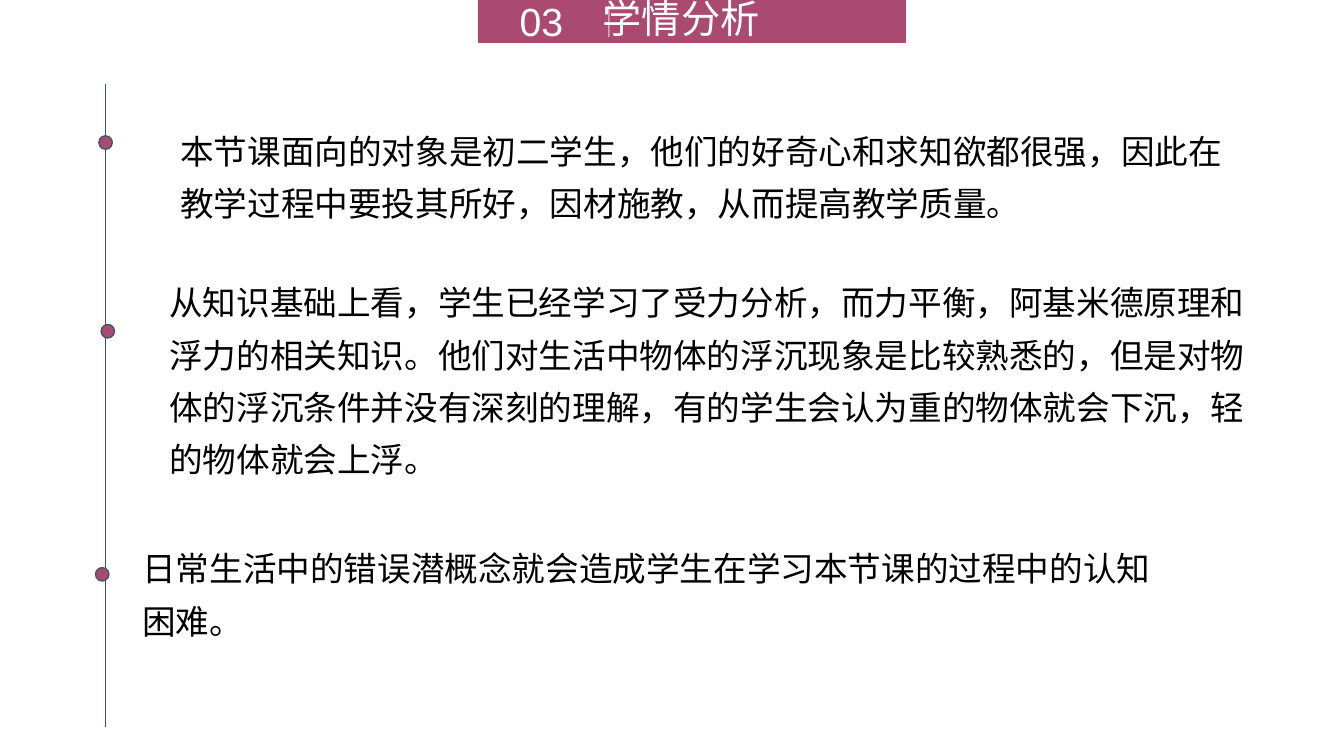
from lxml import etree
from pptx import Presentation
from pptx.dml.color import RGBColor
from pptx.enum.shapes import MSO_CONNECTOR, MSO_SHAPE
from pptx.enum.text import MSO_ANCHOR, MSO_AUTO_SIZE, PP_ALIGN
from pptx.oxml.ns import qn
from pptx.util import Pt

COLORS = {"plum": "AB4A70", "slate": "44546A", "white": "FFFFFF", "black": "000000"}
FONT = "Arial"
DOT_SIZE = 9.6

# left, top, width, height, text
PARAGRAPHS = [
    (121.7, 81.4, 766, 83,
     "本节课面向的对象是初二学生，他们的好奇心和求知欲都很强，因此在教学过程中要投其所好，因材施教，从而提高教学质量。"),
    (113.8, 189.4, 800, 158,
     "从知识基础上看，学生已经学习了受力分析，而力平衡，阿基米德原理和浮力的相关知识。"
     "他们对生活中物体的浮沉现象是比较熟悉的，但是对物体的浮沉条件并没有深刻的理解，"
     "有的学生会认为重的物体就会下沉，轻的物体就会上浮。"),
    (94.6, 379.4, 752.4, 83,
     "日常生活中的错误潜概念就会造成学生在学习本节课的过程中的认知困难。"),
]
DOTS = [(70.6, 97), (72.2, 231.8), (68.2, 405.4)]


def rgb(name):
    return RGBColor.from_string(COLORS[name])


def place(sp, left, top, width, height):
    sp.left, sp.top, sp.width, sp.height = Pt(left), Pt(top), Pt(width), Pt(height)


def add_filled_shape(s, kind, left, top, width, height, line):
    sp = s.shapes.add_shape(kind, Pt(left), Pt(top), Pt(width), Pt(height))
    sp.shadow.inherit = False
    sp.fill.solid()
    sp.fill.fore_color.rgb = rgb("plum")
    sp.line.color.rgb = rgb(line)
    sp.line.width = Pt(1)
    return sp


def add_vertical_line(s, x, top, bottom, color, opacity=100):
    line = s.shapes.add_connector(MSO_CONNECTOR.STRAIGHT, Pt(x), Pt(top), Pt(x), Pt(bottom))
    line.line.color.rgb = rgb(color)
    line.line.width = Pt(1)
    sp_pr = line.element.spPr
    if opacity < 100:
        clr = sp_pr.find(".//" + qn("a:srgbClr"))
        etree.SubElement(clr, qn("a:alpha")).set("val", str(opacity * 1000))
    etree.SubElement(sp_pr, qn("a:effectLst"))


def write_text(sp, text, size, color, align=PP_ALIGN.LEFT,
               anchor=MSO_ANCHOR.TOP, spacing=1.0):
    tf = sp.text_frame
    tf.word_wrap = True
    tf.auto_size = MSO_AUTO_SIZE.NONE
    tf.vertical_anchor = anchor
    p = tf.paragraphs[0]
    p.alignment = align
    p.line_spacing = spacing
    r = p.add_run()
    r.text = text
    r.font.name = FONT
    r.font.size = Pt(size)
    r.font.color.rgb = rgb(color)


def add_text(s, left, top, width, height, text, size, color, **layout):
    sp = s.shapes.add_textbox(Pt(left), Pt(top), Pt(width), Pt(height))
    write_text(sp, text, size, color, **layout)


def add_header(s):
    banner = add_filled_shape(s, MSO_SHAPE.RECTANGLE, 342, 0, 304.6, 30.2, "plum")
    title = s.shapes.title
    title.element.addprevious(banner.element)
    place(title, 423.4, -24.5, 204.5, 74.9)
    write_text(title, "学情分析", 28, "white", anchor=MSO_ANCHOR.MIDDLE)
    add_text(s, 342, -22.3, 89.3, 74.9, "03", 28, "white",
             align=PP_ALIGN.CENTER, anchor=MSO_ANCHOR.MIDDLE)
    add_vertical_line(s, 434.9, 4.3, 26.6, "white", opacity=49)


def main():
    prs = Presentation()
    prs.slide_width, prs.slide_height = Pt(960), Pt(540)
    s = prs.slides.add_slide(prs.slide_layouts[5])
    add_header(s)
    add_vertical_line(s, 75.6, 59.8, 519.1, "slate")
    for left, top in DOTS:
        add_filled_shape(s, MSO_SHAPE.OVAL, left, top, DOT_SIZE, DOT_SIZE, "slate")
    for left, top, width, height, text in PARAGRAPHS:
        add_text(s, left, top, width, height, text, 24, "black", spacing=1.3)
    prs.save("out.pptx")


if __name__ == "__main__":
    main()
